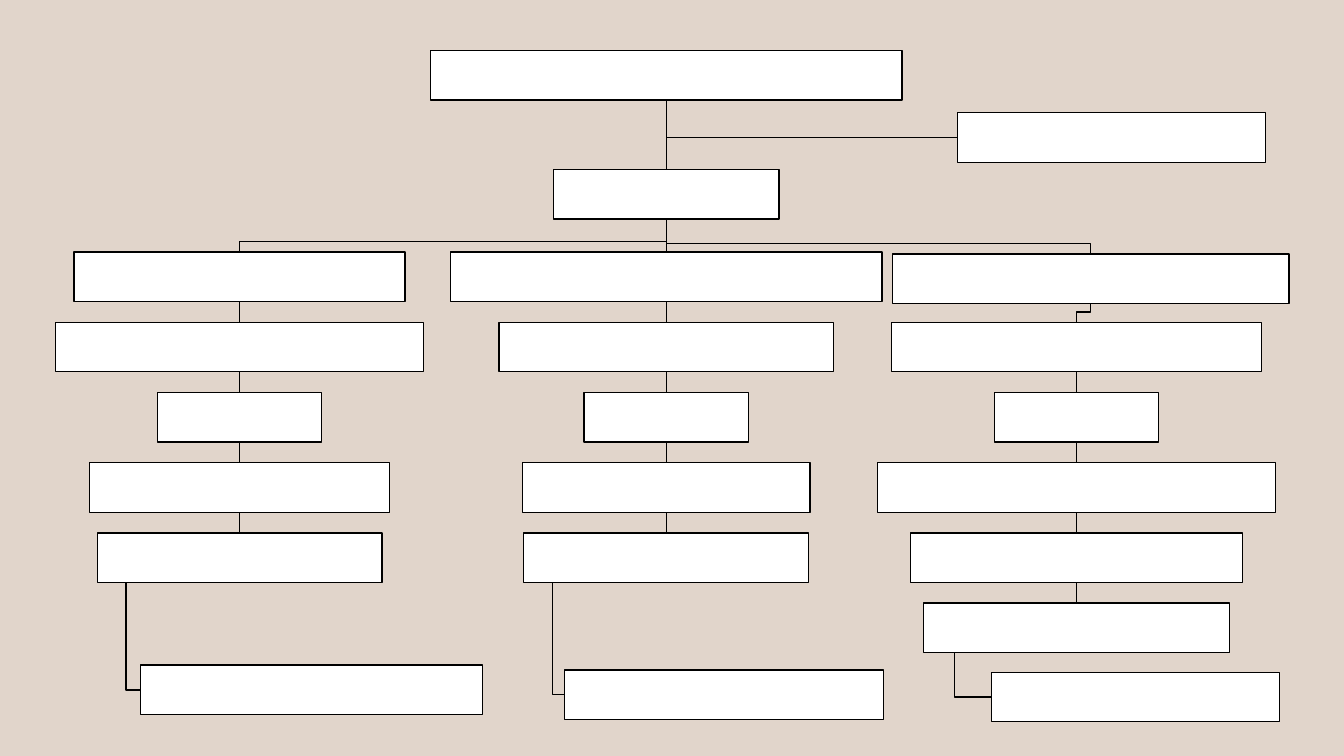
from pptx import Presentation
from pptx.dml.color import RGBColor
from pptx.enum.shapes import MSO_CONNECTOR, MSO_SHAPE
from pptx.oxml.ns import qn
from pptx.util import Cm, Pt
from lxml.etree import SubElement

BACKGROUND = RGBColor(0xE1, 0xD5, 0xCB)
WHITE = RGBColor(0xFF, 0xFF, 0xFF)
BLACK = RGBColor(0x00, 0x00, 0x00)

BOX_HEIGHT = 1.25
ROW_PITCH = 1.77
FIRST_ROW = 8.12
ELBOW_RISE = 0.26  # height of a horizontal run above the box it leads to

deck = Presentation()
deck.slide_width, deck.slide_height = Cm(33.87), Cm(19.05)
page = deck.slides.add_slide(deck.slide_layouts[6])
page.background.fill.solid()
page.background.fill.fore_color.rgb = BACKGROUND


def add_box(left, top, width):
    box = page.shapes.add_shape(
        MSO_SHAPE.RECTANGLE, Cm(left), Cm(top), Cm(width), Cm(BOX_HEIGHT))
    box.shadow.inherit = False
    box.fill.solid()
    box.fill.fore_color.rgb = WHITE
    box.line.color.rgb = BLACK
    box.line.width = Pt(1)


def add_line(*points):
    corners = [(Cm(x), Cm(y)) for x, y in points]
    if len(corners) == 2:
        line = page.shapes.add_connector(
            MSO_CONNECTOR.STRAIGHT, *corners[0], *corners[1])
        SubElement(line._element.spPr, qn("a:effectLst"))
    else:
        builder = page.shapes.build_freeform(*corners[0])
        builder.add_line_segments(corners[1:], close=False)
        line = builder.convert_to_shape()
        line.shadow.inherit = False
        line.fill.background()
    line.line.color.rgb = BLACK
    line.line.width = Pt(1)


# Top of the chart: head, side box and second level
CENTER = 16.79
HEAD_TOP, HEAD_WIDTH = 1.27, 11.88
SIDE_LEFT, SIDE_TOP, SIDE_WIDTH = 24.13, 2.84, 7.76
SECOND_TOP, SECOND_WIDTH = 4.27, 5.69
head_bottom = HEAD_TOP + BOX_HEIGHT
second_bottom = SECOND_TOP + BOX_HEIGHT
side_middle = SIDE_TOP + BOX_HEIGHT / 2

add_line((CENTER, head_bottom), (CENTER, SECOND_TOP))
add_line((CENTER, side_middle), (SIDE_LEFT, side_middle))
add_box(CENTER - HEAD_WIDTH / 2, HEAD_TOP, HEAD_WIDTH)
add_box(CENTER - SECOND_WIDTH / 2, SECOND_TOP, SECOND_WIDTH)
add_box(SIDE_LEFT, SIDE_TOP, SIDE_WIDTH)

# Branches: lead box (center, top, width), row center, row widths,
# and the hanging box (left, top, width)
branches = [
    ((6.04, 6.35, 8.34), 6.04, [9.28, 4.14, 7.57, 7.17], (3.54, 16.76, 8.62)),
    ((CENTER, 6.35, 10.88), CENTER, [8.43, 4.14, 7.25, 7.18], (14.23, 16.88, 8.03)),
    ((27.49, 6.4, 9.99), 27.13, [9.32, 4.14, 10.04, 8.38, 7.7], (24.99, 16.94, 7.26)),
]

for lead, row_center, row_widths, hanging in branches:
    boxes = [lead] + [(row_center, FIRST_ROW + ROW_PITCH * row, width)
                      for row, width in enumerate(row_widths)]

    # Chain of centered boxes, each joined to the one above
    above_center, above_bottom = CENTER, second_bottom
    for center, top, width in boxes:
        start, end = (above_center, above_bottom), (center, top)
        if center == above_center:
            add_line(start, end)
        else:
            turn = top - ELBOW_RISE
            add_line(start, (above_center, turn), (center, turn), end)
        add_box(center - width / 2, top, width)
        above_center, above_bottom = center, top + BOX_HEIGHT

    # Hanging box, joined from a tenth of the way along the last box
    left, top, hanging_width = hanging
    drop = center - 0.4 * width
    middle = top + BOX_HEIGHT / 2
    add_line((drop, above_bottom), (drop, middle), (left, middle))
    add_box(left, top, hanging_width)

deck.save("out.pptx")
